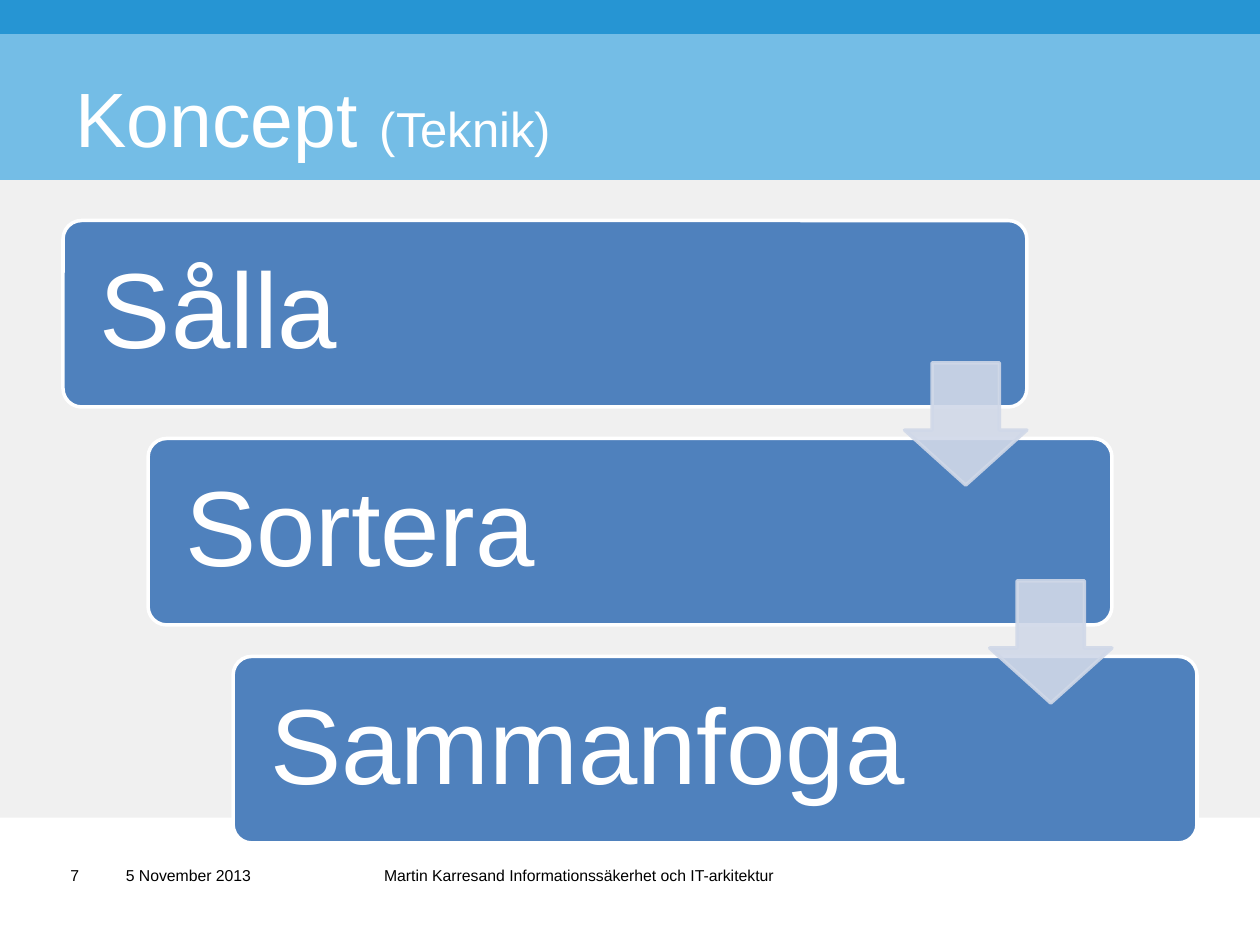
"""Build the concept slide with three cascading steps."""
from lxml.etree import SubElement
from pptx import Presentation
from pptx.dml.color import RGBColor
from pptx.enum.shapes import MSO_SHAPE
from pptx.enum.text import MSO_ANCHOR, PP_ALIGN
from pptx.oxml.ns import qn
from pptx.util import Inches, Pt

WHITE = RGBColor(0xFF, 0xFF, 0xFF)
BLACK = RGBColor(0x00, 0x00, 0x00)
SKY = RGBColor(0x74, 0xBD, 0xE6)
GREY = RGBColor(0xF0, 0xF0, 0xF0)
AZURE = RGBColor(0x26, 0x95, 0xD3)
STEEL = RGBColor(0x4F, 0x81, 0xBD)
PALE = RGBColor(0xD0, 0xD8, 0xE8)

STEPS = ["Sålla", "Sortera", "Sammanfoga"]
STEP_RIGHT, STEP_DOWN = 0.675, 1.73
BANDS = [(0.27, 1.17, SKY), (1.43, 5.06, GREY), (0, 0.27, AZURE)]
FOOTERS = [
    ("5 November 2013", (0.9, 6.82, 2.11, 0.26)),
    ("Martin Karresand Informationssäkerhet och IT-arkitektur", (2.95, 6.82, 4.25, 0.52)),
    ("7", (0.46, 6.82, 0.54, 0.31)),
]


def set_values(target, values):
    for name, value in values.items():
        setattr(target, name, value)


def add_span(para, text, size, color):
    span = para.add_run()
    span.text = text
    set_values(span.font, {"name": "Arial", "size": Pt(size)})
    span.font.color.rgb = color


def add_filled(page, kind, place, color, adjustments=(), outline=None):
    shape = page.shapes.add_shape(kind, *map(Inches, place))
    shape.shadow.inherit = False
    shape.fill.solid()
    shape.fill.fore_color.rgb = color
    for index, value in enumerate(adjustments):
        shape.adjustments[index] = value
    if outline is None:
        shape.line.fill.background()
    else:
        shape.line.color.rgb = outline
        shape.line.width = Pt(2)
    return shape


def add_title(page):
    title = page.shapes.title
    places = zip(("left", "top", "width", "height"), map(Inches, (0.5, 0.3, 9, 1.25)))
    set_values(title, dict(places))
    title.text_frame.vertical_anchor = MSO_ANCHOR.MIDDLE
    para = title.text_frame.paragraphs[0]
    para.alignment = PP_ALIGN.LEFT
    add_span(para, "Koncept ", 44, WHITE)
    add_span(para, "(Teknik)", 28, WHITE)
    page.shapes.element.append(title.element)


def add_step(page, index, text):
    place = (0.5 + index * STEP_RIGHT, 1.75 + index * STEP_DOWN, 7.65, 1.48)
    box = add_filled(page, MSO_SHAPE.ROUNDED_RECTANGLE, place, STEEL, [0.1], WHITE)
    margins = dict.fromkeys(
        ("margin_left", "margin_top", "margin_right", "margin_bottom"), Inches(0.25))
    set_values(box.text_frame, {
        **margins, "word_wrap": True, "vertical_anchor": MSO_ANCHOR.MIDDLE})
    para = box.text_frame.paragraphs[0]
    set_values(para, {"alignment": PP_ALIGN.LEFT, "line_spacing": 0.9})
    add_span(para, text, 61, WHITE)


def add_arrow(page, index):
    place = (7.18 + index * STEP_RIGHT, 2.88 + index * STEP_DOWN, 0.97, 0.97)
    arrow = add_filled(page, MSO_SHAPE.DOWN_ARROW, place, PALE, [0.55, 0.45], PALE)
    for color in arrow.element.spPr.iter(qn("a:srgbClr")):
        SubElement(color, qn("a:alpha"), val="90000")


def add_footer(page, text, place):
    box = page.shapes.add_textbox(*map(Inches, place))
    box.text_frame.word_wrap = True
    add_span(box.text_frame.paragraphs[0], text, 9, BLACK)


def main():
    deck = Presentation()
    set_values(deck, {"slide_width": Inches(10), "slide_height": Inches(7.5)})
    page = deck.slides.add_slide(deck.slide_layouts[5])
    for top, height, color in BANDS:
        add_filled(page, MSO_SHAPE.RECTANGLE, (0, top, 10, height), color)
    add_title(page)
    for index, text in enumerate(STEPS):
        add_step(page, index, text)
    for index in range(len(STEPS) - 1):
        add_arrow(page, index)
    for text, place in FOOTERS:
        add_footer(page, text, place)
    deck.save("out.pptx")


if __name__ == "__main__":
    main()
